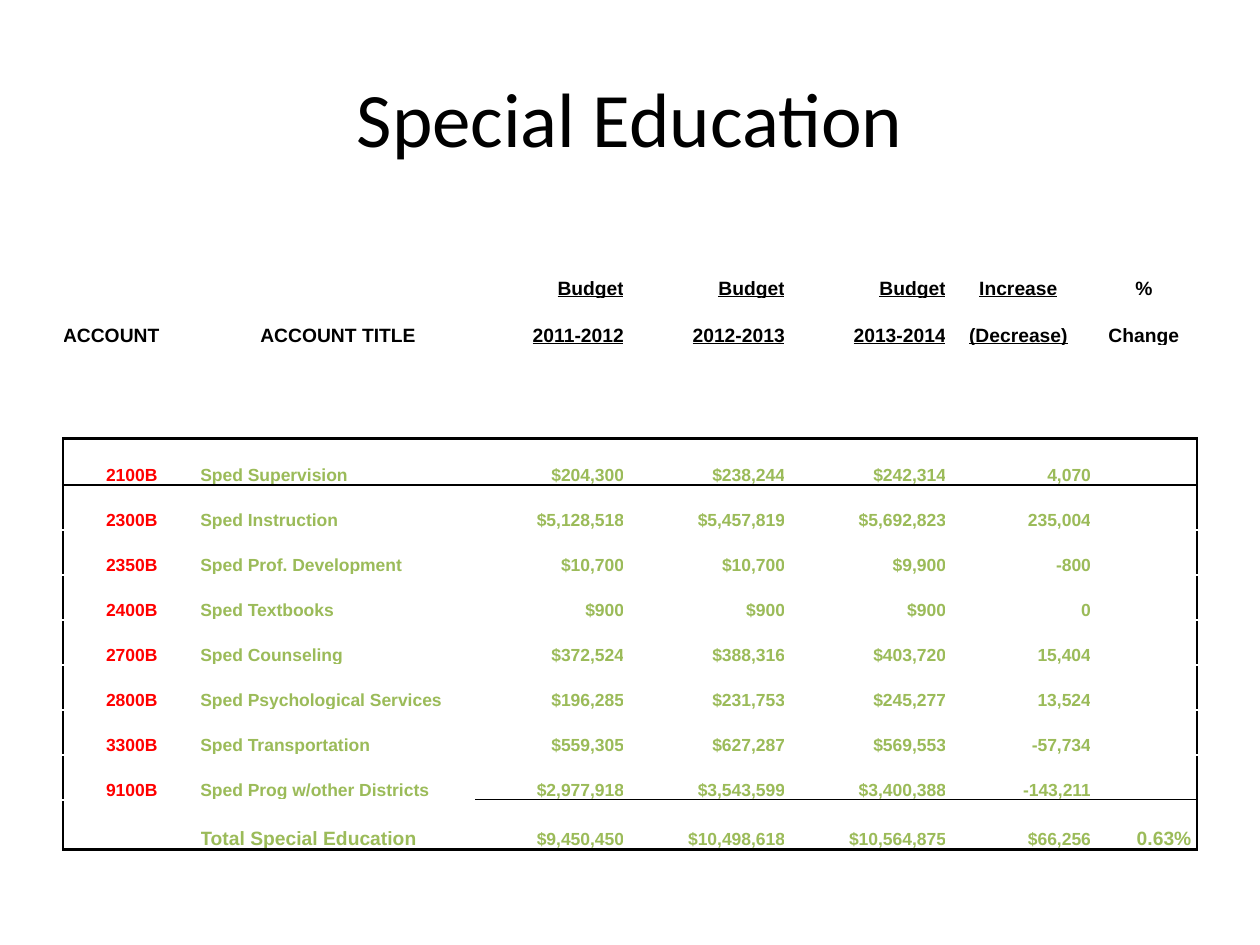
from dataclasses import dataclass
from typing import Any

from lxml.etree import SubElement
from pptx import Presentation
from pptx.dml.color import RGBColor
from pptx.enum.text import MSO_ANCHOR, MSO_UNDERLINE, PP_ALIGN
from pptx.oxml.ns import qn
from pptx.util import Pt

LEFT, CENTER, RIGHT = PP_ALIGN.LEFT, PP_ALIGN.CENTER, PP_ALIGN.RIGHT

HEADERS = [
    ["", "", "Budget", "Budget", "Budget", "Increase", "%"],
    ["ACCOUNT", "ACCOUNT TITLE", "2011-2012", "2012-2013", "2013-2014", "(Decrease)", "Change"],
]
ACCOUNTS = [
    ["2100B", "Sped Supervision", "$204,300", "$238,244", "$242,314", "4,070", ""],
    ["2300B", "Sped Instruction", "$5,128,518", "$5,457,819", "$5,692,823", "235,004", ""],
    ["2350B", "Sped Prof. Development", "$10,700", "$10,700", "$9,900", "-800", ""],
    ["2400B", "Sped Textbooks", "$900", "$900", "$900", "0", ""],
    ["2700B", "Sped Counseling", "$372,524", "$388,316", "$403,720", "15,404", ""],
    ["2800B", "Sped Psychological Services", "$196,285", "$231,753", "$245,277", "13,524", ""],
    ["3300B", "Sped Transportation", "$559,305", "$627,287", "$569,553", "-57,734", ""],
    ["9100B", "Sped Prog w/other Districts", "$2,977,918", "$3,543,599", "$3,400,388", "-143,211", ""],
]
TOTAL = ["", "Total Special Education", "$9,450,450", "$10,498,618", "$10,564,875", "$66,256", "0.63% "]
ROWS = HEADERS + [[""] * 7] * 2 + ACCOUNTS + [TOTAL]
FIRST_ACCOUNT = len(ROWS) - len(ACCOUNTS) - 1
TOTAL_ROW = len(ROWS) - 1

COL_WIDTHS = [78.5, 157.4, 84.7, 92, 92, 82.8, 60.6]
ROW_HEIGHTS = [26.9, 26.9, 25.7, 27.2, 26.7] + [25.7] * 7 + [28.4]
HEADER_ALIGN = [LEFT, CENTER, RIGHT, RIGHT, RIGHT, CENTER, CENTER]
BODY_ALIGN = [CENTER, LEFT] + [RIGHT] * 5


def color(value):
    return RGBColor.from_string(value)


@dataclass
class Deck:
    s: Any
    title_font: str = "Calibri"
    table_font: str = "Arial"
    ink: str = "000000"
    code: str = "FF0000"
    body: str = "9BBB59"
    box_line: float = 1.5
    sum_line: float = 0.5

    def title(self, text, x, y, w, h):
        tf = self.s.shapes.add_textbox(Pt(x), Pt(y), Pt(w), Pt(h)).text_frame
        tf.word_wrap = True
        tf.vertical_anchor = MSO_ANCHOR.MIDDLE
        tf.text = text
        self.format(tf.paragraphs[0], CENTER, self.title_font, 44, self.ink)

    def format(self, p, align, font, size, fill, bold=False):
        p.alignment = align
        for r in p.runs:
            r.font.name = font
            r.font.size = Pt(size)
            r.font.bold = bold
            r.font.color.rgb = color(fill)

    def table(self, rows, x, y):
        frame = self.s.shapes.add_table(
            len(rows), len(COL_WIDTHS), Pt(x), Pt(y), Pt(sum(COL_WIDTHS)), Pt(sum(ROW_HEIGHTS))
        )
        table = frame.table
        table.first_row = table.horz_banding = False
        for column, width in zip(table.columns, COL_WIDTHS):
            column.width = Pt(width)
        for row, height in zip(table.rows, ROW_HEIGHTS):
            row.height = Pt(height)
        for i, values in enumerate(rows):
            for j, text in enumerate(values):
                self.cell(table.cell(i, j), text, i, j)

    def cell(self, cell, text, i, j):
        cell.margin_left = cell.margin_right = cell.margin_top = cell.margin_bottom = 0
        cell.vertical_anchor = MSO_ANCHOR.BOTTOM
        cell.fill.background()
        cell.text = text
        p = cell.text_frame.paragraphs[0]
        p.font.size = Pt(10)
        if i < FIRST_ACCOUNT:
            self.format(p, HEADER_ALIGN[j], self.table_font, 11, self.ink, True)
            if 2 <= j <= 5:
                for r in p.runs:
                    r.font.underline = MSO_UNDERLINE.DOUBLE_LINE
        else:
            size = 11 if i == TOTAL_ROW and j in (1, 6) else 10
            fill = self.code if j == 0 else self.body
            self.format(p, BODY_ALIGN[j], self.table_font, size, fill, True)
        self.borders(cell, i, j)

    def borders(self, cell, i, j):
        edges = {}
        if i >= FIRST_ACCOUNT and j == 0:
            edges["lnL"] = self.box_line
        if i >= FIRST_ACCOUNT and j == len(COL_WIDTHS) - 1:
            edges["lnR"] = self.box_line
        if i == FIRST_ACCOUNT:
            edges["lnT"] = self.box_line
        elif i == TOTAL_ROW and j >= 2:
            edges["lnT"] = self.sum_line
        if i in (FIRST_ACCOUNT - 1, TOTAL_ROW):
            edges["lnB"] = self.box_line
        elif i == TOTAL_ROW - 1 and j >= 2:
            edges["lnB"] = self.sum_line
        tc_pr = cell._tc.get_or_add_tcPr()
        for place, (tag, width) in enumerate(edges.items()):
            line = SubElement(tc_pr, qn(f"a:{tag}"), w=str(Pt(width)))
            fill = SubElement(line, qn("a:solidFill"))
            SubElement(fill, qn("a:srgbClr"), val=self.ink)
            tc_pr.insert(place, line)


def main():
    prs = Presentation()
    prs.slide_width, prs.slide_height = Pt(720), Pt(540)
    deck = Deck(prs.slides.add_slide(prs.slide_layouts[6]))
    deck.title("Special Education", 36, 21.6, 648, 90)
    deck.table(ROWS, 36, 144)
    prs.save("out.pptx")


if __name__ == "__main__":
    main()
